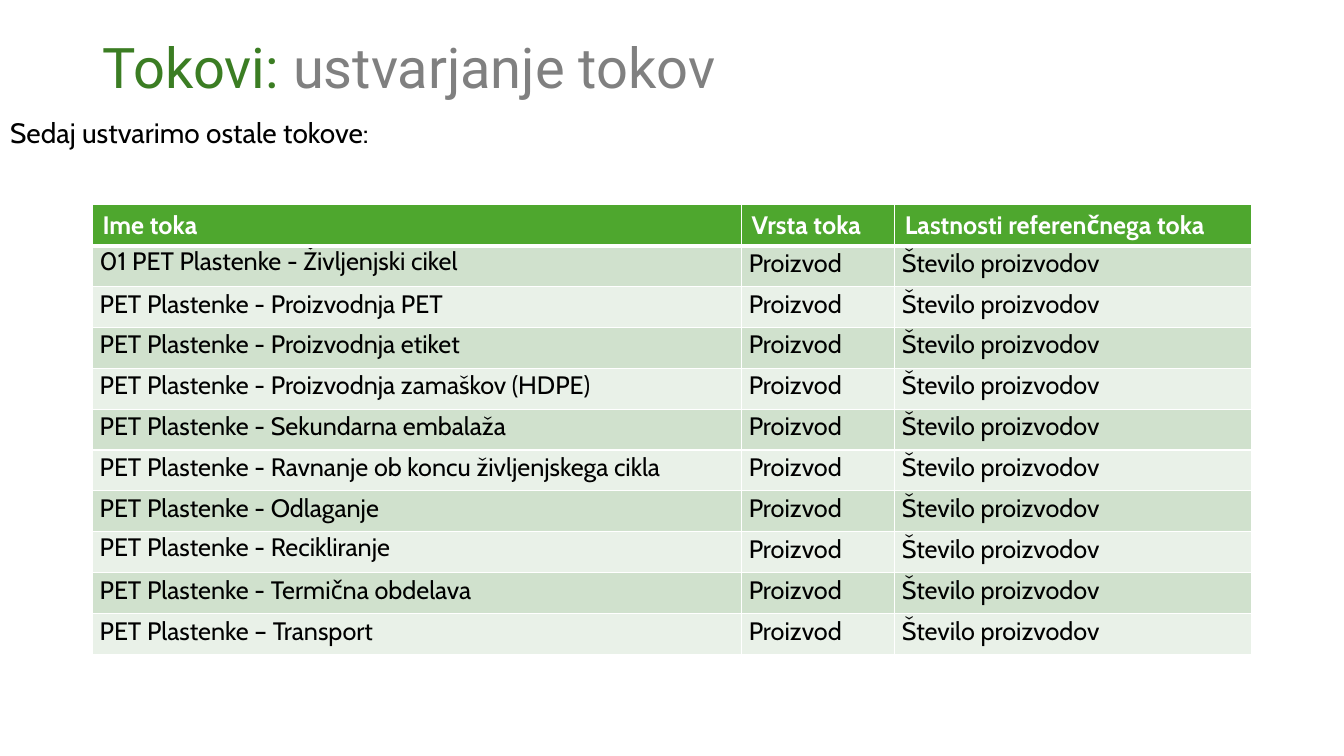
from lxml.etree import SubElement
from pptx import Presentation
from pptx.dml.color import RGBColor
from pptx.enum.text import MSO_ANCHOR, MSO_AUTO_SIZE, PP_ALIGN
from pptx.oxml.ns import qn
from pptx.util import Cm, Pt

# Content
TITLE = ("Tokovi: ", "ustvarjanje tokov")
INTRO = "Sedaj ustvarimo ostale tokove:"
HEAD = ("Ime toka", "Vrsta toka", "Lastnosti referenčnega toka")
FLOWS = [
    "01 PET Plastenke - Življenjski cikel",
    "PET Plastenke - Proizvodnja PET",
    "PET Plastenke - Proizvodnja etiket",
    "PET Plastenke - Proizvodnja zamaškov (HDPE)",
    "PET Plastenke - Sekundarna embalaža",
    "PET Plastenke - Ravnanje ob koncu življenjskega cikla",
    "PET Plastenke - Odlaganje",
    "PET Plastenke - Recikliranje",
    "PET Plastenke - Termična obdelava",
    "PET Plastenke – Transport",
]
KIND, UNIT = "Proizvod", "Število proizvodov"
TIGHT = (FLOWS[0], FLOWS[7])  # names set with single line spacing

# Look
WHITE = RGBColor(0xFF, 0xFF, 0xFF)
BLACK = RGBColor(0x00, 0x00, 0x00)
GRAY = RGBColor(0x80, 0x80, 0x80)
DARK = RGBColor(0x3B, 0x7D, 0x23)
GREEN = RGBColor(0x4E, 0xA7, 0x2E)
BANDS = (RGBColor(0xD0, 0xE1, 0xCD), RGBColor(0xE9, 0xF1, 0xE8))

LEFT, WIDE = Cm(2.33), Cm(29.21)
TOP, ROW = Cm(5.16), Cm(1.03)
COLS = (Cm(16.36), Cm(3.86), Cm(8.99))


def write(frame, *parts, size=18, font="Cabin", colors=(BLACK,),
          bold=False, line=1.0):
    """Fill the first paragraph with one run per part."""
    para = frame.paragraphs[0]
    para.alignment = PP_ALIGN.LEFT
    para.line_spacing = line
    para.space_before = Pt(0)
    for text, color in zip(parts, colors):
        run = para.add_run()
        run.text = text
        run.font.size = Pt(size)
        run.font.name = font
        run.font.bold = bold
        run.font.color.rgb = color


def place(shape, left, top, width, height):
    shape.left, shape.top = left, top
    shape.width, shape.height = width, height
    shape.text_frame.word_wrap = True
    shape.text_frame.auto_size = MSO_AUTO_SIZE.NONE


def edge(cell, **widths):
    """Draw white cell borders, widths in points by side."""
    props = cell._tc.get_or_add_tcPr()
    for side in "LRTB":
        line = SubElement(props, qn("a:ln" + side),
                          w=str(Pt(widths.get(side, 1))))
        fill = SubElement(line, qn("a:solidFill"))
        SubElement(fill, qn("a:srgbClr"), val=str(WHITE))


deck = Presentation()
deck.slide_width, deck.slide_height = Cm(33.87), Cm(19.05)
slide = deck.slides.add_slide(deck.slide_layouts[1])

# Title
title = slide.shapes.title
place(title, LEFT, Cm(0.38), WIDE, Cm(2.77))
title.text_frame.vertical_anchor = MSO_ANCHOR.MIDDLE
write(title.text_frame, *TITLE, size=40, font="Roboto",
      colors=(DARK, GRAY), line=0.9)

# Intro line without a bullet
intro = slide.placeholders[1]
place(intro, Cm(0), Cm(2.87), WIDE, Cm(1.32))
props = intro.text_frame.paragraphs[0]._p.get_or_add_pPr()
props.set("marL", "0")
props.set("indent", "0")
SubElement(props, qn("a:buNone"))
write(intro.text_frame, INTRO, size=20, line=0.9)

# Table of flows
rows = [HEAD] + [(name, KIND, UNIT) for name in FLOWS]
table = slide.shapes.add_table(len(rows), len(COLS), LEFT, TOP,
                               WIDE, ROW * len(rows)).table
table.horz_banding = False
for col, width in zip(table.columns, COLS):
    col.width = width
for r, row in enumerate(rows):
    table.rows[r].height = ROW
    for c, text in enumerate(row):
        cell = table.cell(r, c)
        edge(cell, T=3 if r == 1 else 1, B=3 if r == 0 else 1)
        cell.fill.solid()
        if r == 0:
            cell.fill.fore_color.rgb = GREEN
            write(cell.text_frame, text, colors=(WHITE,), bold=True)
        else:
            cell.fill.fore_color.rgb = BANDS[(r - 1) % 2]
            cell.margin_left = cell.margin_right = Cm(0.18)
            cell.margin_top = cell.margin_bottom = Cm(0)
            write(cell.text_frame, text,
                  line=1.0 if text in TIGHT else 1.07)

deck.save("out.pptx")
